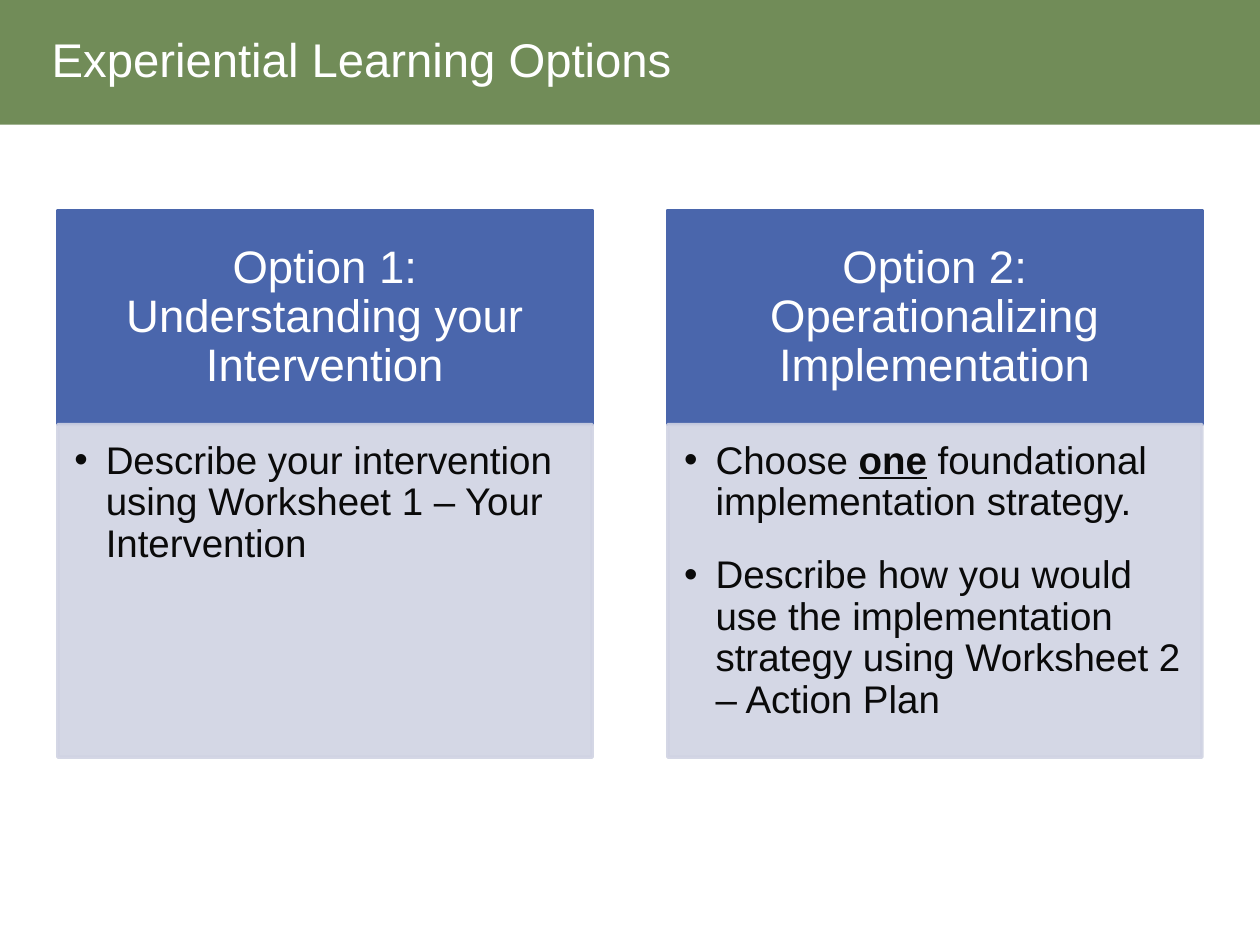
from lxml.etree import SubElement
from pptx import Presentation
from pptx.dml.color import RGBColor
from pptx.enum.shapes import MSO_SHAPE
from pptx.enum.text import MSO_ANCHOR, PP_ALIGN
from pptx.oxml.ns import qn
from pptx.util import Inches, Pt

# Content: heading, then bullets made of (text, emphasized) runs
TITLE = "Experiential Learning Options"
OPTIONS = [
    ("Option 1: Understanding your Intervention", [
        [("Describe your intervention using Worksheet 1 – Your Intervention", False)],
    ]),
    ("Option 2: Operationalizing Implementation", [
        [("Choose ", False), ("one", True),
         (" foundational implementation strategy.", False)],
        [("Describe how you would use the implementation strategy using "
          "Worksheet 2 – Action Plan", False)],
    ]),
]

FONT = "Arial"
GREEN = RGBColor(0x71, 0x8C, 0x58)
BLUE = RGBColor(0x4A, 0x66, 0xAC)
PALE_BLUE = RGBColor(0xD0, 0xD3, 0xE3)
WHITE = RGBColor(0xFF, 0xFF, 0xFF)
BLACK = RGBColor(0x0A, 0x0A, 0x0A)

# Column grid, in inches
SLIDE_WIDTH, SLIDE_HEIGHT = 10, 7.5
MARGIN, GAP = 0.46, 0.6
COLUMN_WIDTH = (SLIDE_WIDTH - 2 * MARGIN - GAP * (len(OPTIONS) - 1)) / len(OPTIONS)
HEADING_TOP, HEADING_HEIGHT, BODY_HEIGHT = 1.67, 1.7, 2.64


def set_insets(frame, left, top, right, bottom):
    frame.margin_left, frame.margin_top = Inches(left), Inches(top)
    frame.margin_right, frame.margin_bottom = Inches(right), Inches(bottom)
    frame.word_wrap = True


def add_run(paragraph, text, size, color, emphasized=False):
    run = paragraph.add_run()
    run.text = text
    font = run.font
    font.name, font.size, font.color.rgb = FONT, Pt(size), color
    if emphasized:
        font.bold = font.underline = True


def add_box(slide, left, top, width, height, color, outlined=True, opacity=100):
    shape = slide.shapes.add_shape(
        MSO_SHAPE.RECTANGLE, Inches(left), Inches(top), Inches(width), Inches(height))
    shape.shadow.inherit = False
    shape.fill.solid()
    shape.fill.fore_color.rgb = color
    if outlined:
        shape.line.color.rgb = color
        shape.line.width = Pt(2)
    else:
        shape.line.fill.background()
    if opacity < 100:
        for color_element in shape._element.spPr.iter(qn("a:srgbClr")):
            SubElement(color_element, qn("a:alpha"), val=str(opacity * 1000))
    return shape


def add_bullet(paragraph):
    properties = paragraph._p.get_or_add_pPr()
    properties.set("marL", str(Inches(0.25)))
    properties.set("indent", str(Inches(-0.25)))
    SubElement(properties, qn("a:buFont"), typeface=FONT)
    SubElement(properties, qn("a:buChar"), char="•")


def add_option(slide, left, heading, bullets):
    # Heading block
    frame = add_box(slide, left, HEADING_TOP, COLUMN_WIDTH, HEADING_HEIGHT, BLUE).text_frame
    set_insets(frame, 0.2, 0.12, 0.2, 0.12)
    frame.vertical_anchor = MSO_ANCHOR.MIDDLE
    paragraph = frame.paragraphs[0]
    paragraph.alignment = PP_ALIGN.CENTER
    paragraph.line_spacing = 0.9
    add_run(paragraph, heading, 26, WHITE)

    # Bulleted block
    frame = add_box(slide, left, HEADING_TOP + HEADING_HEIGHT, COLUMN_WIDTH,
                    BODY_HEIGHT, PALE_BLUE, opacity=90).text_frame
    set_insets(frame, 0.13, 0.13, 0.16, 0.19)
    frame.vertical_anchor = MSO_ANCHOR.TOP
    for index, runs in enumerate(bullets):
        paragraph = frame.add_paragraph() if index else frame.paragraphs[0]
        add_bullet(paragraph)
        paragraph.alignment = PP_ALIGN.LEFT
        paragraph.line_spacing = 0.9
        if index < len(bullets) - 1:
            paragraph.space_after = Pt(18)
        for text, emphasized in runs:
            add_run(paragraph, text, 22, BLACK, emphasized)


def main():
    presentation = Presentation()
    presentation.slide_width = Inches(SLIDE_WIDTH)
    presentation.slide_height = Inches(SLIDE_HEIGHT)
    slide = presentation.slides.add_slide(presentation.slide_layouts[5])
    title = slide.shapes.title

    # Title over its band
    band = add_box(slide, 0, -0.1, SLIDE_WIDTH, 1.09, GREEN, outlined=False)
    title._element.addprevious(band._element)
    title.left, title.top = Inches(0.41), Inches(0.19)
    title.width, title.height = Inches(9.07), Inches(1.03)
    set_insets(title.text_frame, 0, 0.05, 0, 0.05)
    title.text_frame.vertical_anchor = MSO_ANCHOR.TOP
    paragraph = title.text_frame.paragraphs[0]
    paragraph.alignment = PP_ALIGN.LEFT
    add_run(paragraph, TITLE, 27, WHITE)

    # Option columns
    for column, (heading, bullets) in enumerate(OPTIONS):
        add_option(slide, MARGIN + column * (COLUMN_WIDTH + GAP), heading, bullets)

    presentation.save("out.pptx")


if __name__ == "__main__":
    main()
